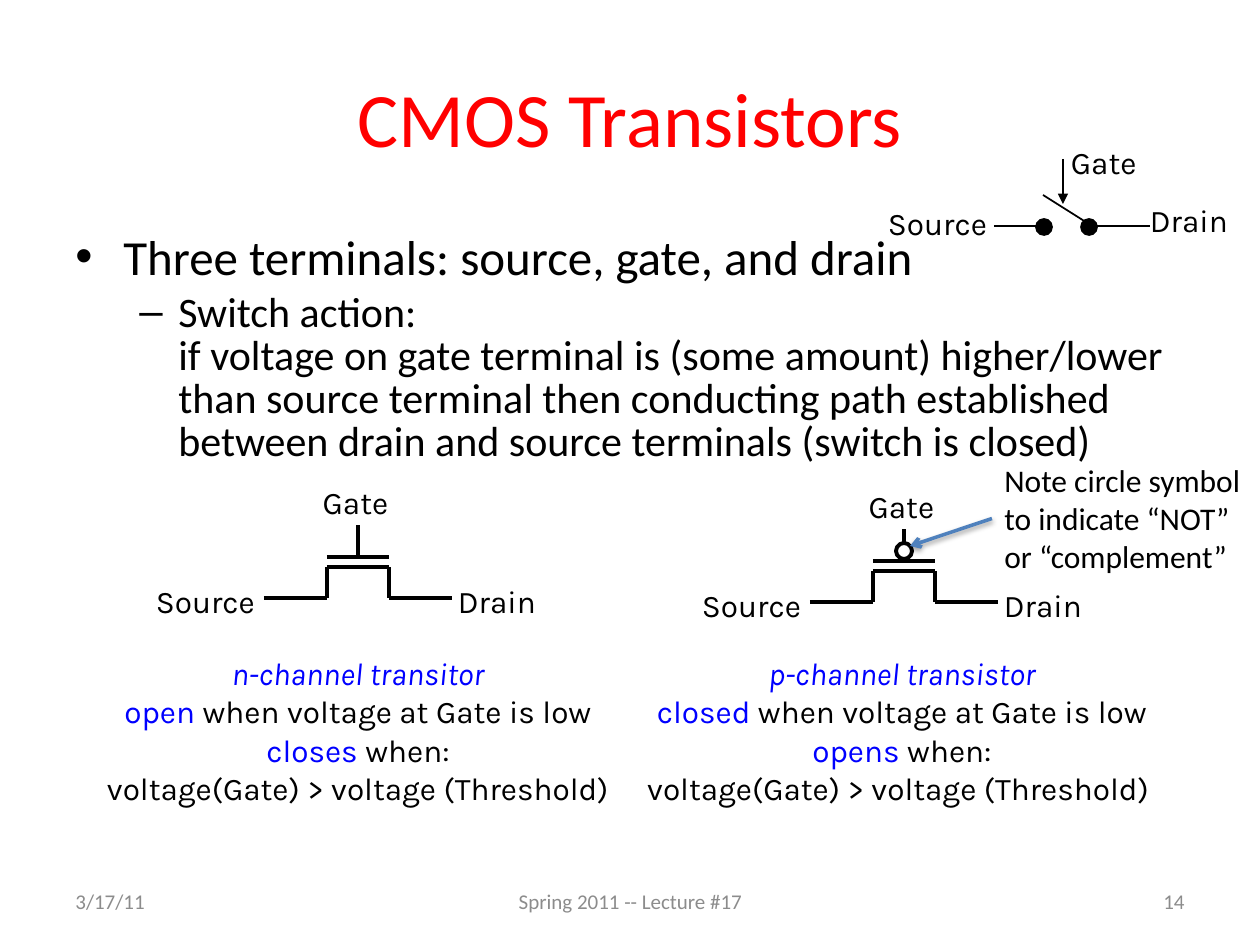
from itertools import pairwise

from lxml.etree import SubElement
from pptx import Presentation
from pptx.dml.color import RGBColor
from pptx.enum.shapes import MSO_CONNECTOR, MSO_SHAPE
from pptx.enum.text import MSO_ANCHOR, PP_ALIGN
from pptx.oxml.ns import qn
from pptx.util import Emu, Pt

EMU_PER_PX = 914400 / 126
BLACK, BLUE, GREY = "000000", "0000FF", "8C8C8C"
LEFT, CENTER, RIGHT = PP_ALIGN.LEFT, PP_ALIGN.CENTER, PP_ALIGN.RIGHT


def px(length):
    return Emu(round(length * EMU_PER_PX))


def color(hex_string):
    return RGBColor.from_string(hex_string)


def add_box(shapes, left, top, width, height, tight=False, anchor=MSO_ANCHOR.TOP):
    box = shapes.add_textbox(px(left), px(top), px(width), px(height))
    frame = box.text_frame
    frame.word_wrap = True
    frame.vertical_anchor = anchor
    if tight:
        frame.margin_left = frame.margin_right = px(3)
        frame.margin_top = frame.margin_bottom = px(4)
    return box


def style(para, size, font="Calibri", fill=BLACK, align=LEFT):
    para.alignment = align
    para.font.size = Pt(size)
    para.font.name = font
    para.font.color.rgb = color(fill)


def add_text(shapes, place, text, size, fill=BLACK, align=LEFT, anchor=MSO_ANCHOR.TOP):
    box = add_box(shapes, *place, anchor=anchor)
    para = box.text_frame.paragraphs[0]
    para.text = text
    style(para, size, fill=fill, align=align)
    return box


def add_label(shapes, place, text, align=LEFT, spacing=22):
    para = add_box(shapes, *place, tight=True).text_frame.paragraphs[0]
    para.text = text
    style(para, 18, "Karla", align=align)
    para.line_spacing = Pt(spacing)


def add_line(shapes, start, end, weight, fill=BLACK, head=None):
    line = shapes.add_connector(MSO_CONNECTOR.STRAIGHT, *map(px, start + end))
    line.line.color.rgb = color(fill)
    line.line.width = Pt(weight)
    if head:
        SubElement(line.line._get_or_add_ln(), qn("a:tailEnd"), type=head)
    SubElement(line._element.spPr, qn("a:effectLst"))
    return line


def add_circle(shapes, center_x, center_y, fill, weight):
    circle = shapes.add_shape(MSO_SHAPE.OVAL, px(center_x - 8), px(center_y - 8), px(16), px(16))
    circle.shadow.inherit = False
    circle.fill.solid()
    circle.fill.fore_color.rgb = color(fill)
    circle.line.color.rgb = color(BLACK)
    circle.line.width = Pt(weight)


def add_bullet(para, level, indent, hanging, mark, size):
    style(para, size)
    para.level = level
    para.space_before = Pt(size * 0.2)
    properties = para._p.get_or_add_pPr()
    properties.set("marL", str(px(indent)))
    properties.set("indent", str(-px(hanging)))
    defaults = properties.find(qn("a:defRPr"))
    for tag, attributes in (("a:buFont", {"typeface": "Arial"}), ("a:buChar", {"char": mark})):
        defaults.addprevious(properties.makeelement(qn(tag), attributes))


def add_body(shapes):
    frame = add_box(shapes, 63, 220, 1134, 260).text_frame
    first, second = frame.paragraphs[0], frame.add_paragraph()
    first.text = "Three terminals: source, gate, and drain"
    second.text = (
        "Switch action:\vif voltage on gate terminal is (some amount) higher/lower "
        "than source terminal then conducting path established between drain and "
        "source terminals (switch is closed)"
    )
    add_bullet(first, 0, 48, 48, "•", 28)
    add_bullet(second, 1, 103, 39, "–", 24)
    second.line_spacing = 0.85


def add_caption(shapes, left, kind, low_state, high_state, condition):
    frame = add_box(shapes, left, 649, 540, 173, tight=True).text_frame
    states, threshold = frame.paragraphs[0], frame.add_paragraph()
    lines = [
        [(kind, BLUE)],
        [(low_state + " ", BLUE), ("when voltage at Gate is low", BLACK)],
        [(high_state + " ", BLUE), ("when:", BLACK)],
    ]
    for index, spans in enumerate(lines):
        if index:
            states.add_line_break()
        for text, fill in spans:
            span = states.add_run()
            span.text = text
            span.font.color.rgb = color(fill)
            span.font.italic = index == 0
    threshold.text = condition
    for para in (states, threshold):
        style(para, 18, "Karla", align=CENTER)
        para.line_spacing = Pt(22)


def add_transistor(page, x, y, inverted=False):
    """Draw the symbol with the top of its gate lead at (x, y)."""
    shapes = page.shapes.add_group_shape().shapes
    add_label(shapes, (x - 46, y - 47, 87, 59), "Gate", CENTER)
    add_label(shapes, (x - 210, y + 52, 110, 59), "Source", RIGHT)
    add_label(shapes, (x + 97, y + 52, 90, 59), "Drain")
    channel = [(-94, 73), (-31, 73), (-31, 42), (31, 42), (31, 73), (94, 73)]
    plate, lead = [(-31, 32), (31, 32)], [(0, 32), (0, 0)]
    for path in (channel, plate, lead):
        points = [(x + dx, y + dy) for dx, dy in path]
        for start, end in pairwise(points):
            add_line(shapes, start, end, 2.25)
    if inverted:
        add_circle(shapes, x, y + 22, "FFFFFF", 2.25)


def add_note(page):
    shapes = page.shapes.add_group_shape().shapes
    text = "Note circle symbol to indicate “NOT” or “complement”"
    box = add_text(shapes, (992, 455, 268, 127), text, 18)
    arrow = add_line(shapes, (992, 519), (910, 546), 2, "4F81BD", "arrow")
    arrow.begin_connect(box, 1)
    effects = arrow._element.spPr.find(qn("a:effectLst"))
    shadow = SubElement(effects, qn("a:outerShdw"), blurRad=str(Pt(3.1)),
                        dist=str(Pt(1.6)), dir="5400000", rotWithShape="0")
    shade = SubElement(shadow, qn("a:srgbClr"), val=BLACK)
    SubElement(shade, qn("a:alpha"), val="38000")


def add_switch(page):
    shapes = page.shapes.add_group_shape().shapes
    add_line(shapes, (994, 226), (1042, 226), 1)
    add_line(shapes, (1043, 195), (1089, 224), 1)
    add_line(shapes, (1090, 226), (1150, 226), 1)
    add_line(shapes, (1063, 159), (1063, 204), 1, head="triangle")
    for x in (1044, 1089):
        add_circle(shapes, x, 227, BLACK, 1)
    add_label(shapes, (1068, 131, 90, 62), "Gate", spacing=26)
    add_label(shapes, (1147, 189, 90, 62), "Drain", spacing=26)
    add_label(shapes, (880, 192, 110, 62), "Source", RIGHT, 26)


def main():
    deck = Presentation()
    deck.slide_width, deck.slide_height = px(1260), px(945)
    page = deck.slides.add_slide(deck.slide_layouts[6])
    shapes = page.shapes
    middle = MSO_ANCHOR.MIDDLE

    add_text(shapes, (63, 38, 1134, 157), "CMOS Transistors", 44, "FF0000", CENTER, middle)
    add_body(shapes)
    condition = "voltage(Gate) > voltage (Threshold)"
    add_caption(shapes, 88, "n-channel transitor", "open", "closes", condition)
    add_caption(shapes, 632, "p-channel transistor", "closed", "opens", condition + " ")
    add_transistor(page, 358, 525)
    add_transistor(page, 904, 529, inverted=True)
    add_note(page)
    add_switch(page)
    footers = [
        (63, 294, "3/17/11", LEFT),
        (431, 399, "Spring 2011 -- Lecture #17", CENTER),
        (903, 294, "14", RIGHT),
    ]
    for left, width, text, align in footers:
        add_text(shapes, (left, 876, width, 50), text, 12, GREY, align, middle)
    deck.save("out.pptx")


if __name__ == "__main__":
    main()
